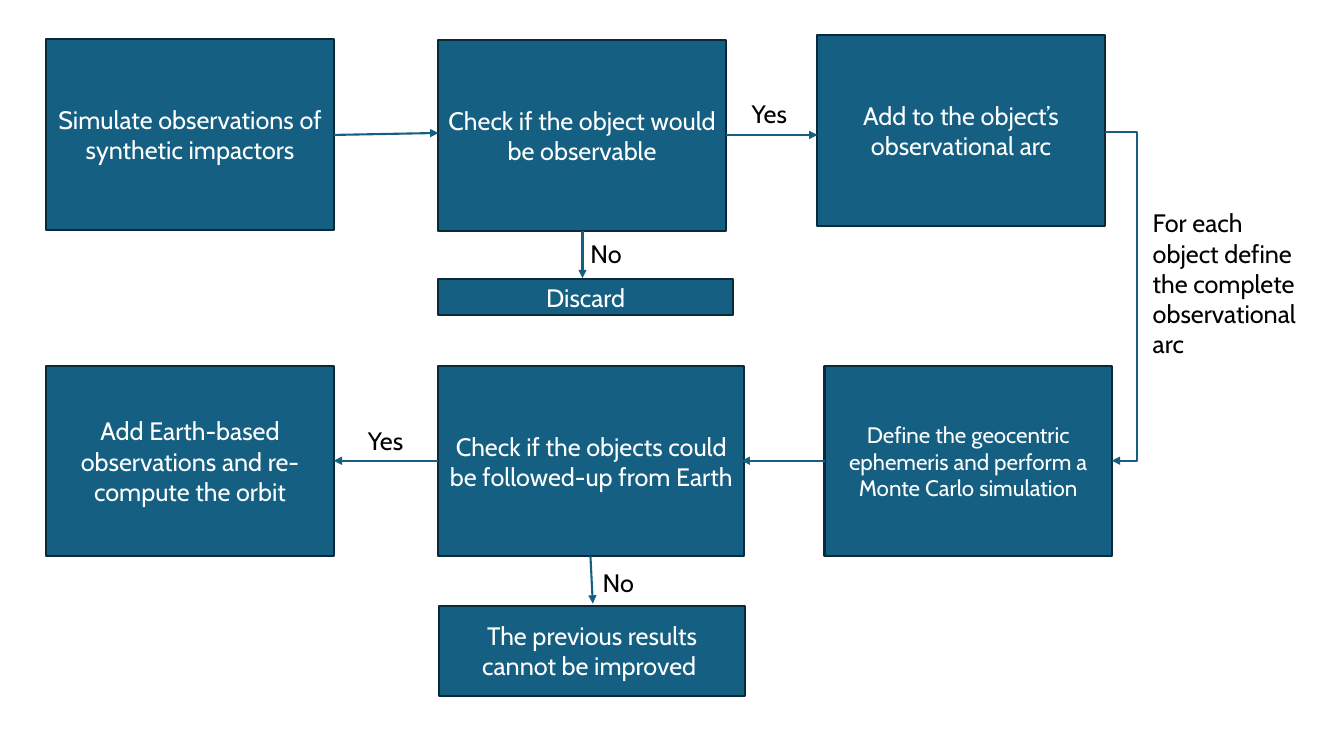
from dataclasses import dataclass
from typing import Optional

import lxml.etree
import pptx
import pptx.dml.color
import pptx.enum.shapes
import pptx.enum.text
import pptx.oxml.ns
import pptx.shapes.autoshape
import pptx.slide
import pptx.util


@dataclass(frozen=True)
class Theme:
    font: str = "Cabin"
    fill: str = "156082"
    outline: str = "092A39"
    box_text: str = "FFFFFF"
    label_text: str = "000000"
    body_size: int = 18
    small_size: int = 16
    line_width: float = 1.5


@dataclass(frozen=True)
class Step:
    text: str
    left: float
    top: float
    width: float = 7.24
    height: float = 4.8
    size: int = Theme.body_size


@dataclass(frozen=True)
class Label:
    text: str
    left: float
    top: float
    width: float
    height: float = 1.02


@dataclass(frozen=True)
class Arrow:
    x1: float
    y1: float
    x2: float
    y2: float
    bend_x: Optional[float] = None


THEME = Theme()
FIRST_COLUMN, SECOND_COLUMN, THIRD_COLUMN = 1.17, 11.05, 20.78
FIRST_COLUMN_END = 8.41
LOWER_ROW = 9.22
LOWER_MIDDLE = 11.61
CHECK_WIDTH = 7.7

STEPS = [
    Step("Simulate observations of synthetic impactors", FIRST_COLUMN, 0.99),
    Step("Check if the object would be observable", SECOND_COLUMN, 1.02),
    Step("Discard", SECOND_COLUMN, 7.04, 7.42, 0.89),
    Step("Add to the object’s observational arc", 20.6, 0.89),
    Step("Define the geocentric ephemeris and perform a Monte Carlo simulation",
         THIRD_COLUMN, LOWER_ROW, size=THEME.small_size),
    Step("Check if the objects could be followed-up from Earth",
         SECOND_COLUMN, LOWER_ROW, CHECK_WIDTH),
    Step("The previous results cannot be improved ", 11.07, 15.27, CHECK_WIDTH, 2.26),
    Step("Add Earth-based observations and re-compute the orbit", FIRST_COLUMN, LOWER_ROW),
]

LABELS = [
    Label("Yes", 18.69, 2.36, 1.73),
    Label("No", 14.63, 5.89, 1.55),
    Label("For each object define the complete observational arc", 28.8, 5.11, 4.27, 4.11),
    Label("No", 14.94, 14.17, 1.98),
    Label("Yes", 9.02, 10.59, 1.88),
]

ARROWS = [
    Arrow(FIRST_COLUMN_END, 3.4, SECOND_COLUMN, 3.35),
    Arrow(18.29, 3.4, 20.6, 3.4),
    Arrow(14.68, 5.82, 14.68, 7.01),
    Arrow(27.84, 3.33, 28.02, LOWER_MIDDLE, bend_x=28.65),
    Arrow(THIRD_COLUMN, LOWER_MIDDLE, 18.69, LOWER_MIDDLE),
    Arrow(14.88, 14.02, 14.94, 15.21),
    Arrow(SECOND_COLUMN, LOWER_MIDDLE, FIRST_COLUMN_END, LOWER_MIDDLE),
]


def rgb(value: str) -> pptx.dml.color.RGBColor:
    return pptx.dml.color.RGBColor.from_string(value)


def write(holder: pptx.shapes.autoshape.Shape, text: str, size: int, color: str) -> None:
    holder.text_frame.text = text
    holder.text_frame.word_wrap = True
    font = holder.text_frame.paragraphs[0].runs[0].font
    font.name = THEME.font
    font.size = pptx.util.Pt(size)
    font.color.rgb = rgb(color)


def draw_step(slide: pptx.slide.Slide, step: Step) -> None:
    box = slide.shapes.add_shape(
        pptx.enum.shapes.MSO_SHAPE.RECTANGLE,
        *map(pptx.util.Cm, (step.left, step.top, step.width, step.height)))
    box.shadow.inherit = False
    box.fill.solid()
    box.fill.fore_color.rgb = rgb(THEME.fill)
    box.line.color.rgb = rgb(THEME.outline)
    box.line.width = pptx.util.Pt(THEME.line_width)
    write(box, step.text, step.size, THEME.box_text)
    box.text_frame.vertical_anchor = pptx.enum.text.MSO_ANCHOR.MIDDLE
    box.text_frame.paragraphs[0].alignment = pptx.enum.text.PP_ALIGN.CENTER


def draw_label(slide: pptx.slide.Slide, label: Label) -> None:
    caption = slide.shapes.add_textbox(
        *map(pptx.util.Cm, (label.left, label.top, label.width, label.height)))
    write(caption, label.text, THEME.body_size, THEME.label_text)
    caption.text_frame.auto_size = pptx.enum.text.MSO_AUTO_SIZE.SHAPE_TO_FIT_TEXT


def draw_arrow(slide: pptx.slide.Slide, arrow: Arrow) -> None:
    qn = pptx.oxml.ns.qn
    kinds = pptx.enum.shapes.MSO_CONNECTOR
    link = slide.shapes.add_connector(
        kinds.STRAIGHT if arrow.bend_x is None else kinds.ELBOW,
        *map(pptx.util.Cm, (arrow.x1, arrow.y1, arrow.x2, arrow.y2)))
    link.line.color.rgb = rgb(THEME.fill)
    link.line.width = pptx.util.Pt(THEME.line_width)
    properties = link.element.spPr
    lxml.etree.SubElement(properties.find(qn("a:ln")), qn("a:tailEnd"), type="triangle")
    lxml.etree.SubElement(properties, qn("a:effectLst"))
    if arrow.bend_x is not None:
        bend = round((arrow.bend_x - arrow.x1) / (arrow.x2 - arrow.x1) * 100000)
        guides = properties.find(qn("a:prstGeom")).find(qn("a:avLst"))
        lxml.etree.SubElement(guides, qn("a:gd"), name="adj1", fmla=f"val {bend}")


def main() -> None:
    deck = pptx.Presentation()
    deck.slide_width = pptx.util.Cm(33.87)
    deck.slide_height = pptx.util.Cm(19.05)
    slide = deck.slides.add_slide(deck.slide_layouts.get_by_name("Blank"))
    for step in STEPS:
        draw_step(slide, step)
    for arrow in ARROWS:
        draw_arrow(slide, arrow)
    for label in LABELS:
        draw_label(slide, label)
    deck.save("out.pptx")


if __name__ == "__main__":
    main()
